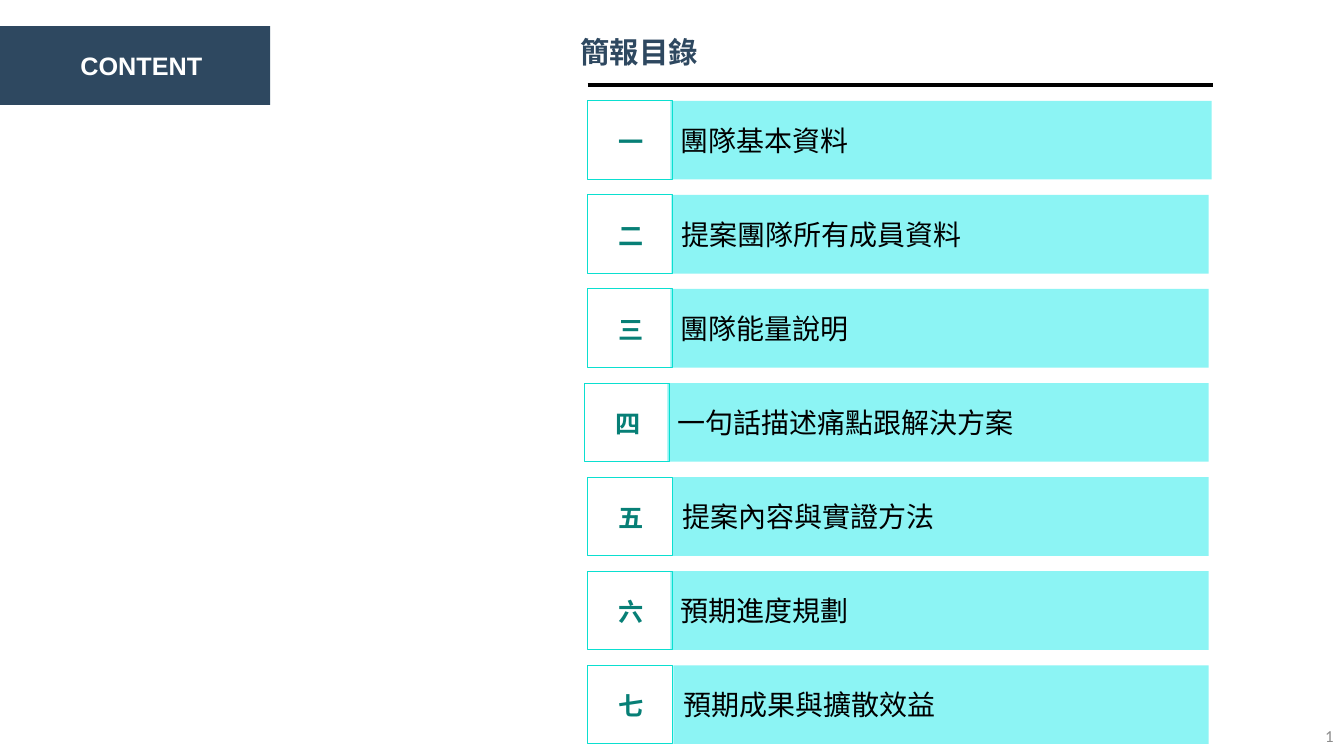
import dataclasses

import pptx
import pptx.dml.color
import pptx.enum.shapes
import pptx.enum.text
import pptx.util
import lxml.etree

Pt = pptx.util.Pt
RGB = pptx.dml.color.RGBColor.from_string
ALIGN = pptx.enum.text.PP_ALIGN
ANCHOR = pptx.enum.text.MSO_ANCHOR
SHAPE = pptx.enum.shapes.MSO_SHAPE


@dataclasses.dataclass(frozen=True)
class Theme:
    navy: str = "2E4860"
    white: str = "FFFFFF"
    black: str = "000000"
    aqua: str = "8CF4F4"
    outline: str = "0BDFD0"
    teal: str = "077F76"
    grey: str = "8C8C8C"
    latin: str = "Arial"
    chinese: str = "Noto Sans CJK SC"
    footer: str = "Calibri"
    heading_size: float = 21
    label_size: float = 20
    badge_size: float = 18
    footer_size: float = 12


@dataclasses.dataclass(frozen=True)
class Box:
    left: float
    top: float
    width: float
    height: float

    def lengths(self):
        return [Pt(value) for value in dataclasses.astuple(self)]


@dataclasses.dataclass(frozen=True)
class Entry:
    number: str
    label: str
    bar_inset: float
    font: str = Theme.latin
    badge_shift: float = 0
    bar_extra: float = 0


THEME = Theme()
ENTRIES = [
    Entry("一", "團隊基本資料", 59, bar_extra=2.2),
    Entry("二", "提案團隊所有成員資料", 59.7),
    Entry("三", "團隊能量說明", 59),
    Entry("四", "一句話描述痛點跟解決方案", 56.9, badge_shift=-2.2),
    Entry("五", "提案內容與實證方法", 60.5),
    Entry("六", "預期進度規劃", 59, THEME.chinese),
    Entry("七", "預期成果與擴散效益", 61.2, THEME.chinese),
]
ROW_PITCH = 67.2
ROW_HEIGHT = 56.2
BADGE_WIDTH = 60.5


def write(shape, text, size, color, font, bold=False,
          align=ALIGN.LEFT, anchor=ANCHOR.MIDDLE):
    frame = shape.text_frame
    frame.text = text
    frame.word_wrap = True
    frame.auto_size = pptx.enum.text.MSO_AUTO_SIZE.NONE
    frame.vertical_anchor = anchor
    para = frame.paragraphs[0]
    para.alignment = align
    span = para.runs[0]
    span.font.name = font
    span.font.size = Pt(size)
    span.font.bold = bold
    span.font.color.rgb = RGB(color)


def add_text(page, box, *args, **options):
    write(page.shapes.add_textbox(*box.lengths()), *args, **options)


def add_block(page, box, fill=None, line=None):
    block = page.shapes.add_shape(SHAPE.RECTANGLE, *box.lengths())
    block.shadow.inherit = False
    if fill:
        block.fill.solid()
        block.fill.fore_color.rgb = RGB(fill)
    else:
        block.fill.background()
    if line:
        block.line.color.rgb = RGB(line)
        block.line.width = Pt(0.75)
    else:
        block.line.fill.background()
    return block


def draw_tab(page, box):
    add_block(page, box, fill=THEME.navy)
    add_text(page, Box(box.left + 50.4, box.top + 14.4, 224.6, 27.4),
             "CONTENT", THEME.badge_size, THEME.white, THEME.latin, bold=True)


def draw_heading(page, box):
    title = page.shapes.title
    title.left, title.top, title.width, title.height = box.lengths()
    write(title, "簡報目錄", THEME.heading_size, THEME.navy, THEME.latin,
          bold=True, anchor=ANCHOR.TOP)
    left, top = Pt(box.left + 12.2), Pt(box.top + 39.8)
    rule = page.shapes.add_connector(
        pptx.enum.shapes.MSO_CONNECTOR.STRAIGHT,
        left, top, left + Pt(446.4), top)
    rule.line.color.rgb = RGB(THEME.black)
    rule.line.width = Pt(3)
    lxml.etree.SubElement(rule.element.spPr, pptx.oxml.ns.qn("a:effectLst"))


def draw_entry(page, box, entry):
    bar_left = box.left + entry.bar_inset
    bar_right = box.left + box.width + entry.bar_extra
    bar = add_block(page, Box(bar_left, box.top, bar_right - bar_left, box.height),
                    fill=THEME.aqua)
    write(bar, entry.label, THEME.label_size, THEME.black, entry.font)
    badge = Box(box.left + entry.badge_shift, box.top, BADGE_WIDTH, box.height)
    add_text(page, Box(badge.left + 14.8, badge.top + 14.4, 30.2, 28.8),
             entry.number, THEME.badge_size, THEME.teal, THEME.latin,
             bold=True, align=ALIGN.CENTER)
    add_block(page, badge, line=THEME.outline)


def draw_agenda(page, box):
    for index, entry in enumerate(ENTRIES):
        row = Box(box.left, box.top + index * ROW_PITCH, box.width, ROW_HEIGHT)
        draw_entry(page, row, entry)


def draw_page_number(page, box):
    add_text(page, box, "1", THEME.footer_size, THEME.grey, THEME.footer,
             align=ALIGN.RIGHT)


def main():
    deck = pptx.Presentation()
    deck.slide_width, deck.slide_height = Pt(960), Pt(540)
    page = deck.slides.add_slide(deck.slide_layouts[5])
    draw_tab(page, Box(0, 18.7, 193, 56.2))
    draw_heading(page, Box(407.5, 20.9, 371.5, 46.8))
    draw_agenda(page, Box(419.8, 72, 443.5, 459.4))
    draw_page_number(page, Box(743.8, 511.2, 216, 28.8))
    deck.save("out.pptx")


if __name__ == "__main__":
    main()
